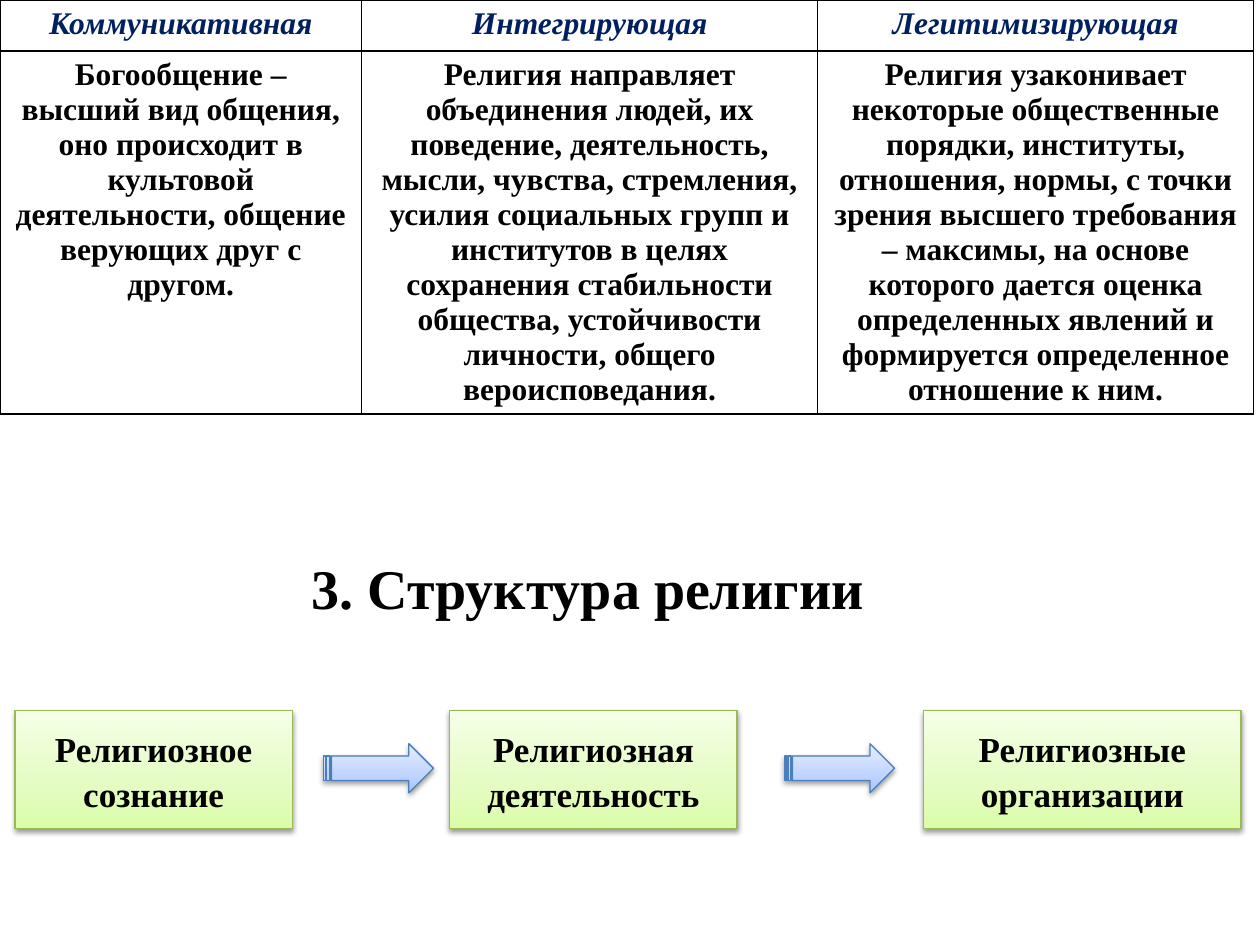
"""Build a slide with the functions of religion and a three-step structure diagram."""
from lxml.etree import SubElement
from pptx import Presentation
from pptx.dml.color import RGBColor
from pptx.enum.shapes import MSO_SHAPE as Shape
from pptx.enum.text import MSO_ANCHOR as Anchor, PP_ALIGN as Align
from pptx.oxml.ns import qn
from pptx.util import Inches, Pt

WIDTH, HEIGHT = Inches(10), Inches(7.5)
FONT = "Times New Roman"
BLACK = RGBColor(0x00, 0x00, 0x00)
WHITE = RGBColor(0xFF, 0xFF, 0xFF)
NAVY = RGBColor(0x00, 0x20, 0x60)
GREEN_LINE = RGBColor(0x98, 0xB9, 0x55)
GREENS = (RGBColor(0xDA, 0xFD, 0xA7), RGBColor(0xE4, 0xFC, 0xC2), RGBColor(0xF5, 0xFF, 0xE7))
BLUE_LINE = RGBColor(0x4B, 0x7E, 0xBC)
BLUES = (RGBColor(0xA4, 0xC4, 0xFF), RGBColor(0xBF, 0xD4, 0xFF), RGBColor(0xE6, 0xEE, 0xFF))
STOPS = (0, 35, 100)

COLUMN_SHARES = (28.7, 36.2, 34.6)
ROW_SHARES = (5.4, 38.3)
FUNCTIONS = (
    ("Коммуникативная", "Интегрирующая", "Легитимизирующая"),
    (
        "Богообщение – высший вид общения, оно происходит в культовой деятельности, "
        "общение верующих друг с другом.",
        "Религия направляет объединения людей, их поведение, деятельность, мысли, чувства, "
        "стремления, усилия социальных групп и институтов в целях сохранения стабильности "
        "общества, устойчивости личности, общего вероисповедания.",
        "Религия узаконивает некоторые общественные порядки, институты, отношения, нормы, "
        "с точки зрения высшего требования – максимы, на основе которого дается оценка "
        "определенных явлений и формируется определенное отношение к ним.",
    ),
)
PARTS = (
    ("Религиозное сознание", 1.2, 22),
    ("Религиозная деятельность", 35.7, 22.8),
    ("Религиозные организации", 73.3, 25.2),
)
ARROW_LEFTS = (25.7, 62.3)


def place(left, top, width, height):
    """Turn percentages of the slide's size into a position and size."""
    return [round(share * side / 100)
            for share, side in zip((left, top, width, height), (WIDTH, HEIGHT) * 2)]


def write(frame, text, size, color=BLACK, italic=False, spacing=None):
    """Set centred bold text in a text frame."""
    frame.text = text
    frame.word_wrap = True
    paragraph = frame.paragraphs[0]
    paragraph.alignment = Align.CENTER
    paragraph.line_spacing = spacing
    font = paragraph.runs[0].font
    font.name, font.size, font.bold, font.italic = FONT, Pt(size), True, italic
    font.color.rgb = color


def add_borders(cell):
    """Draw a thin black line on each side of a cell."""
    properties = cell._tc.get_or_add_tcPr()
    for index, side in enumerate(("a:lnL", "a:lnR", "a:lnT", "a:lnB")):
        line = properties.makeelement(qn(side), {"w": str(Pt(1))})
        SubElement(SubElement(line, qn("a:solidFill")), qn("a:srgbClr"), val=str(BLACK))
        properties.insert(index, line)


def add_functions_table(slide):
    """Add the table of the functions of religion."""
    area = place(0, 0, sum(COLUMN_SHARES), sum(ROW_SHARES))
    table = slide.shapes.add_table(len(FUNCTIONS), len(COLUMN_SHARES), *area).table
    for column, share in zip(table.columns, COLUMN_SHARES):
        column.width = round(WIDTH * share / 100)
    for row, share, texts in zip(table.rows, ROW_SHARES, FUNCTIONS):
        row.height = round(HEIGHT * share / 100)
        is_header = texts is FUNCTIONS[0]
        for cell, text in zip(row.cells, texts):
            cell.fill.solid()
            cell.fill.fore_color.rgb = WHITE
            write(cell.text_frame, text, 18, NAVY if is_header else BLACK, is_header, Pt(20))
            add_borders(cell)


def add_title(slide):
    """Format the title placeholder as the heading of the diagram."""
    title = slide.shapes.title
    title.left, title.top, title.width, title.height = place(22.4, 57.3, 48.5, 9.7)
    title.text_frame.vertical_anchor = Anchor.MIDDLE
    write(title.text_frame, "3. Структура религии", 32)


def add_glossy_shape(slide, kind, area, colors, line_color):
    """Add a shape with an upward gradient and a soft shadow below."""
    shape = slide.shapes.add_shape(kind, *place(*area))
    shape.fill.gradient()
    shape.fill.gradient_angle = 90
    properties = shape._element.spPr
    stops = properties.find(".//" + qn("a:gsLst"))
    stops.clear()
    for position, color in zip(STOPS, colors):
        stop = SubElement(stops, qn("a:gs"), pos=str(position * 1000))
        SubElement(stop, qn("a:srgbClr"), val=str(color))
    shape.line.color.rgb = line_color
    shape.line.width = Pt(0.75)
    shape.shadow.inherit = False
    shadow = SubElement(properties.find(qn("a:effectLst")), qn("a:outerShdw"),
                        blurRad=str(Pt(3.1)), dist=str(Pt(1.6)), dir="5400000", rotWithShape="0")
    shadow_color = SubElement(shadow, qn("a:srgbClr"), val=str(BLACK))
    SubElement(shadow_color, qn("a:alpha"), val="38000")
    return shape


def add_structure(slide):
    """Add the three parts of religion and the arrows between them."""
    for text, left, width in PARTS:
        part = add_glossy_shape(slide, Shape.RECTANGLE, (left, 75.2, width, 12.5),
                                GREENS, GREEN_LINE)
        part.text_frame.vertical_anchor = Anchor.MIDDLE
        write(part.text_frame, text, 20, spacing=1.07)
    for left in ARROW_LEFTS:
        add_glossy_shape(slide, Shape.STRIPED_RIGHT_ARROW, (left, 78.7, 8.7, 5.2),
                         BLUES, BLUE_LINE)


def main():
    """Build and save the slide."""
    presentation = Presentation()
    presentation.slide_width, presentation.slide_height = WIDTH, HEIGHT
    slide = presentation.slides.add_slide(presentation.slide_layouts[5])
    add_functions_table(slide)
    add_title(slide)
    add_structure(slide)
    presentation.save("out.pptx")


if __name__ == "__main__":
    main()
